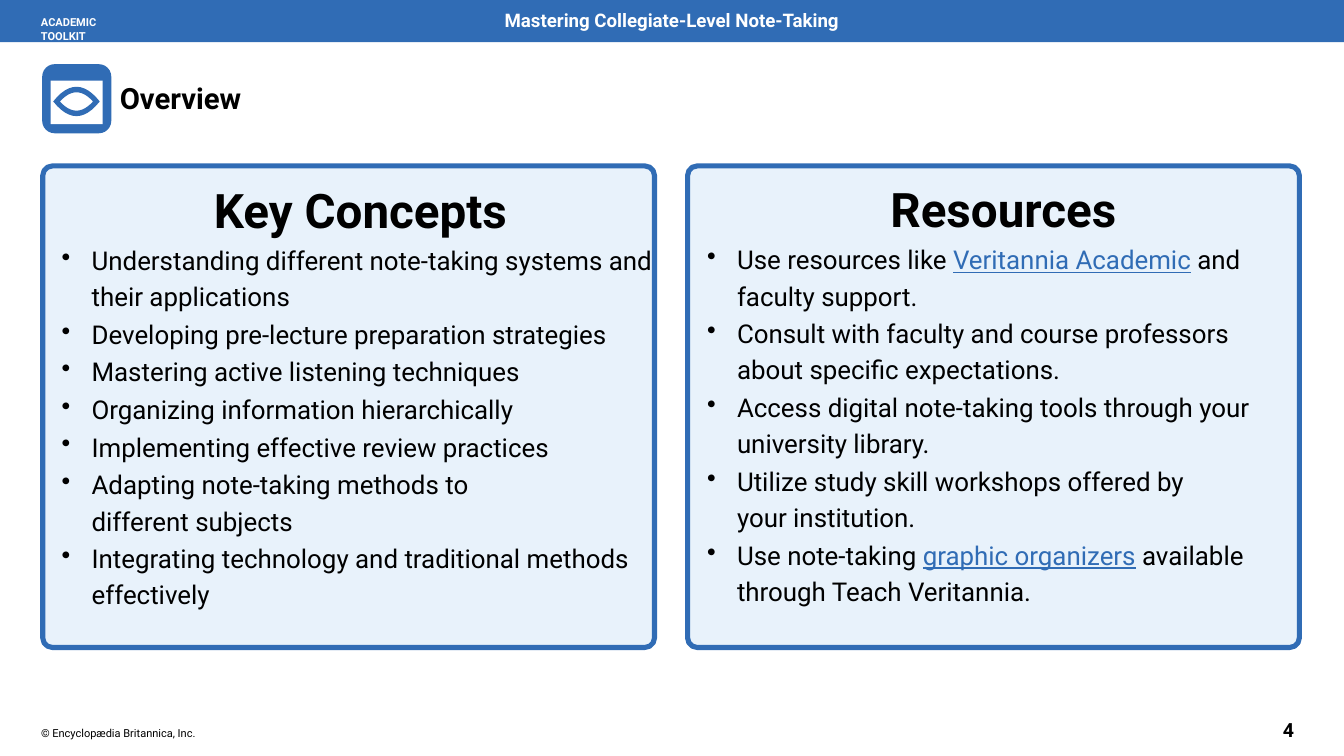
from dataclasses import dataclass

from lxml import etree
from pptx import Presentation
from pptx import util as u
from pptx.dml.color import RGBColor
from pptx.enum import shapes, text
from pptx.oxml.ns import qn

BLUE = RGBColor(0x30, 0x6C, 0xB5)
PALE = RGBColor(0xE8, 0xF2, 0xFB)
WHITE = RGBColor(0xFF, 0xFF, 0xFF)
BLACK = RGBColor(0, 0, 0)
FACE = "Roboto"
WIDE, HIGH = u.Inches(21.99), u.Inches(12.37)
LEFT, CENTER = text.PP_ALIGN.LEFT, text.PP_ALIGN.CENTER
RECT = shapes.MSO_SHAPE.RECTANGLE
ROUND = shapes.MSO_SHAPE.ROUNDED_RECTANGLE


@dataclass(frozen=True)
class Box:
    """Left, top, width and height in percent of the slide."""
    x: float
    y: float
    w: float
    h: float

    def place(self) -> tuple[int, int, int, int]:
        return (round(WIDE * self.x / 100), round(HIGH * self.y / 100),
                round(WIDE * self.w / 100), round(HIGH * self.h / 100))


@dataclass(frozen=True)
class Label:
    words: str
    box: Box
    size: float
    color: RGBColor = BLACK
    bold: bool = True
    align: text.PP_ALIGN = LEFT


@dataclass(frozen=True)
class Card:
    """Each point lists its parts; every second part is styled as a link."""
    head: str
    box: Box
    shift: float
    points: list[tuple[str, ...]]


TITLE = Label("Overview", Box(8.91, 10.51, 9.14, 4.93), 34.5)
LABELS = [
    Label("Mastering Collegiate-Level Note-Taking", Box(34.06, 1.05, 31.83, 3.15),
          22, WHITE, align=CENTER),
    Label("ACADEMIC TOOLKIT", Box(3.05, 1.94, 7.2, 2.02), 13, WHITE),
    Label("4", Box(95.45, 94.75, 1.68, 3.31), 23),
    Label("© Encyclopædia Britannica, Inc.", Box(3.05, 95.88, 11.69, 2.02), 13, bold=False),
]
CARDS = [
    Card("Key Concepts", Box(4.5, 22.23, 44.52, 58.93), 0.03, [
        ("Understanding different note-taking systems and their applications",),
        ("Developing pre-lecture preparation strategies",),
        ("Mastering active listening techniques",),
        ("Organizing information hierarchically",),
        ("Implementing effective review practices",),
        ("Adapting note-taking methods to\ndifferent subjects",),
        ("Integrating technology and traditional methods effectively",),
    ]),
    Card("Resources", Box(52.52, 22.15, 42.56, 58.53), 0.38, [
        ("Use resources like ", "Veritannia Academic", " and faculty support."),
        ("Consult with faculty and course professors about specific expectations.",),
        ("Access digital note-taking tools through your university library.",),
        ("Utilize study skill workshops offered by\nyour institution.",),
        ("Use note-taking ", "graphic organizers", " available through Teach Veritannia."),
    ]),
]


def style(para, size: float, color: RGBColor, bold: bool, align: text.PP_ALIGN) -> None:
    para.alignment = align
    font = para.font
    font.name, font.size, font.bold = FACE, u.Pt(size), bold
    font.color.rgb = color


def frame(shape, top: float):
    """Clear the margins of a text shape and return its text frame."""
    body = shape.text_frame
    body.word_wrap = True
    body.auto_size = text.MSO_AUTO_SIZE.NONE
    body.vertical_anchor = text.MSO_ANCHOR.TOP
    body.margin_left = body.margin_right = body.margin_bottom = 0
    body.margin_top = u.Inches(top)
    return body


def write(shape, label: Label) -> None:
    para = frame(shape, 0.02).paragraphs[0]
    para.text = label.words
    style(para, label.size, label.color, label.bold, label.align)


def paint(shape, fill: RGBColor) -> None:
    shape.shadow.inherit = False
    shape.fill.solid()
    shape.fill.fore_color.rgb = fill
    shape.line.fill.background()


def block(slide, kind: shapes.MSO_SHAPE, box: Box, fill: RGBColor, bend: float = 0):
    shape = slide.shapes.add_shape(kind, *box.place())
    if bend:
        shape.adjustments[0] = bend
    paint(shape, fill)
    return shape


def indent(para, left: float, first: float = 0) -> None:
    props = para._p.get_or_add_pPr()
    props.set("marL", str(u.Inches(left)))
    props.set("indent", str(u.Inches(first)))


def bullet(para, parts: tuple[str, ...]) -> None:
    para.text = parts[0]
    indent(para, 0.51, -0.49)
    para.line_spacing = 1.17
    para.space_before = u.Pt(1.5)
    etree.SubElement(para._p.get_or_add_pPr(), qn("a:buChar")).set("char", "•")
    style(para, 30.5, BLACK, False, LEFT)
    for i, part in enumerate(parts[1:], 1):
        run = para.add_run()
        run.text = part
        if i % 2:
            run.font.color.rgb = BLUE
            run.font.underline = True


def fill_card(slide, card: Card) -> None:
    body = frame(slide.shapes.add_textbox(*card.box.place()), 0.21)
    head = body.paragraphs[0]
    head.text = card.head
    indent(head, card.shift)
    style(head, 56, BLACK, True, CENTER)
    for parts in card.points:
        bullet(body.add_paragraph(), parts)


def lens(box: Box, steps: int = 12) -> list[tuple[int, int]]:
    """Outline of an eye made of two parabolas that fill the box."""
    x, y, w, h = box.place()
    spans = [2 * i / steps - 1 for i in range(steps + 1)]
    upper = [(s, s * s - 1) for s in spans]
    lower = [(-s, 1 - s * s) for s in spans[1:]]
    return [(round(x + w * (1 + a) / 2), round(y + h * (1 + b) / 2))
            for a, b in upper + lower]


def draw_icon(slide) -> None:
    block(slide, ROUND, Box(3.14, 8.49, 5.14, 9.14), BLUE, 0.18)
    block(slide, RECT, Box(3.77, 10.67, 3.87, 5.74), WHITE)
    rim = lens(Box(3.96, 11.48, 3.46, 3.88))
    hole = lens(Box(4.46, 12.21, 2.46, 2.43))
    pen = slide.shapes.build_freeform(*rim[0])
    pen.add_line_segments(rim[1:])
    pen.move_to(*hole[0])
    pen.add_line_segments(hole[1:])
    paint(pen.convert_to_shape(), BLUE)


def main() -> None:
    deck = Presentation()
    deck.slide_width, deck.slide_height = WIDE, HIGH
    slide = deck.slides.add_slide(deck.slide_layouts[5])
    title = slide.shapes.title
    title.left, title.top, title.width, title.height = TITLE.box.place()
    write(title, TITLE)

    block(slide, RECT, Box(0, 0, 100, 5.58), BLUE)
    for i, card in enumerate(CARDS):
        panel = block(slide, ROUND, Box(3.18 + 47.98 * i, 21.95, 45.52, 63.7), PALE, 0.02)
        panel.line.color.rgb = BLUE
        panel.line.width = u.Pt(6)
        fill_card(slide, card)
    draw_icon(slide)
    for label in LABELS:
        write(slide.shapes.add_textbox(*label.box.place()), label)
    deck.save("out.pptx")


if __name__ == "__main__":
    main()
